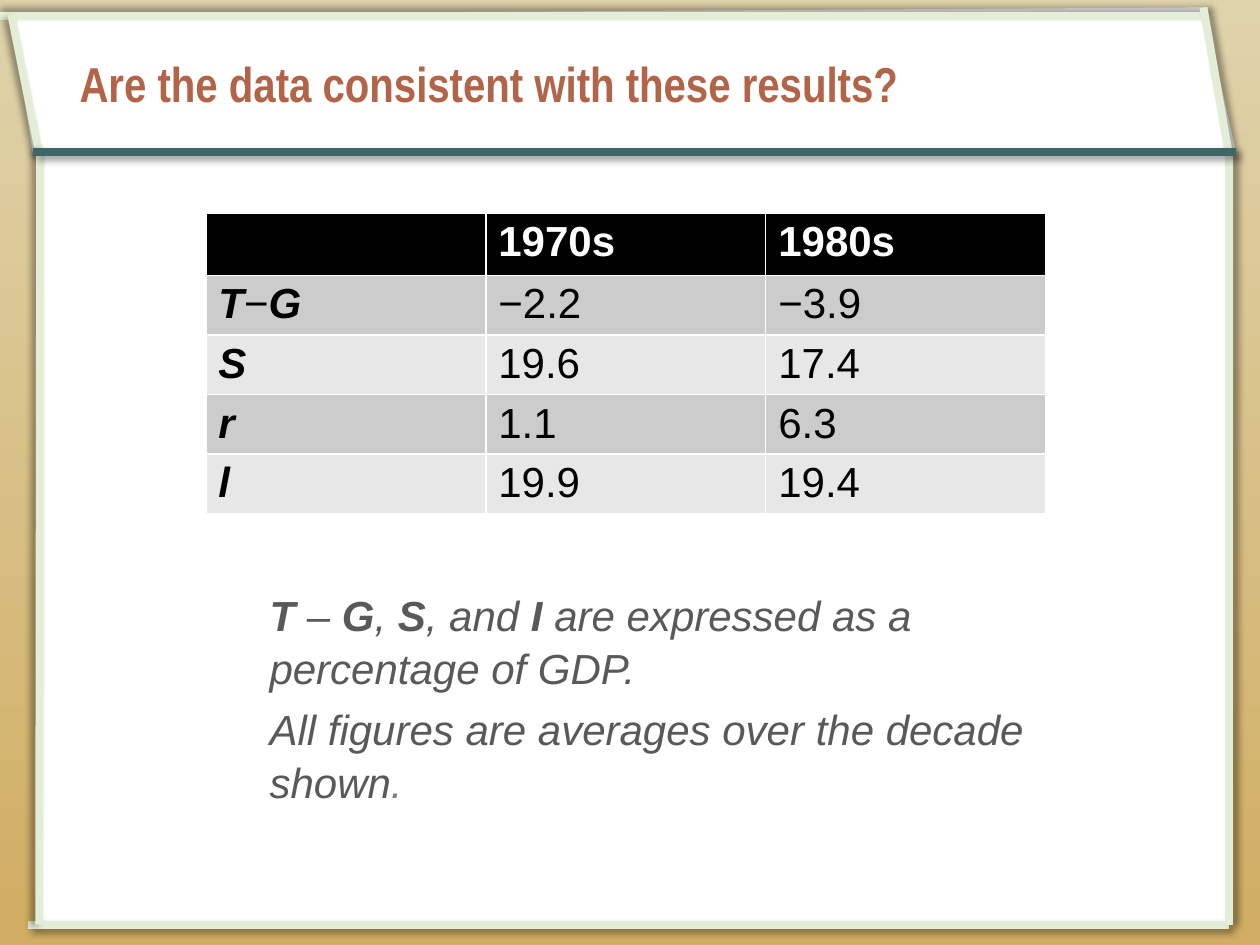
from lxml import etree
from pptx import Presentation
from pptx.dml.color import RGBColor
from pptx.enum.shapes import MSO_CONNECTOR, MSO_SHAPE
from pptx.enum.text import MSO_ANCHOR, MSO_AUTO_SIZE, PP_ALIGN
from pptx.oxml.ns import qn
from pptx.util import Cm, Pt

STRAIGHT = MSO_CONNECTOR.STRAIGHT
RECTANGLE = MSO_SHAPE.RECTANGLE
MIDDLE, TOP = MSO_ANCHOR.MIDDLE, MSO_ANCHOR.TOP
NO_FIT = MSO_AUTO_SIZE.NONE
LEFT = PP_ALIGN.LEFT

COLORS = {
    "sky": "DFD3AB", "sand": "D1AD63", "paper": "FFFFFF", "edge": "E4EDD7",
    "rule": "3D6667", "title": "B16447", "ink": "000000", "note": "595959",
    "stop": "808080", "odd": "CCCCCC", "even": "E7E7E7",
}
DECADES = ["", "1970s", "1980s"]
FIGURES = [
    ("T−G", "−2.2", "−3.9"),
    ("S", "19.6", "17.4"),
    ("r", "1.1", "6.3"),
    ("l", "19.9", "19.4"),
]
NOTES = [
    [("T ", True, "note"), ("– ", False, "note"), ("G", True, "note"),
     (", ", False, "note"), ("S", True, "note"), (", and ", False, "note"),
     ("I", True, "note"),
     (" are expressed as a percentage of GDP.", False, "note")],
    [("All figures are averages over the decade shown", False, "note"),
     (".", False, "stop")],
]


def rgb(name):
    return RGBColor.from_string(COLORS[name])


def add_span(para, text, size=24, color="ink", bold=False, italic=False, font="Arial"):
    span = para.add_run()
    span.text = text
    span.font.size = Pt(size)
    span.font.name = font
    span.font.bold = bold
    span.font.italic = italic
    span.font.color.rgb = rgb(color)


def paint(shape, color):
    shape.fill.solid()
    shape.fill.fore_color.rgb = rgb(color)
    shape.line.fill.background()
    shape.shadow.inherit = False


def add_edge(page, start, end, color, angle):
    edge = page.shapes.add_connector(STRAIGHT, *map(Cm, start + end))
    edge.line.color.rgb = rgb(color)
    edge.line.width = Pt(4.5)
    effects = etree.SubElement(edge._element.spPr, qn("a:effectLst"))
    shadow = etree.SubElement(
        effects, qn("a:outerShdw"), blurRad=str(Pt(4)), dist=str(Pt(3)),
        dir=str(angle * 60000), algn="tl", rotWithShape="0")
    tone = etree.SubElement(shadow, qn("a:srgbClr"), val=COLORS["ink"])
    etree.SubElement(tone, qn("a:alpha"), val="40000")


def draw_folder(page, box):
    left, top, width, height = box
    right, bottom, fold = left + width, top + height, top + 2.92
    flap = [(left, top + 0.15), (right - 0.66, top),
            (right, fold), (left + 0.43, fold)]
    builder = page.shapes.build_freeform(Cm(flap[0][0]), Cm(flap[0][1]), 1)
    builder.add_line_segments([(Cm(x), Cm(y)) for x, y in flap[1:]], close=True)
    paint(builder.convert_to_shape(), "paper")

    add_edge(page, (right - 0.66, top + 0.18), (0, top + 0.18), "edge", 270)
    inner_left, inner_right = left + 0.58, right - 0.15
    sheet = page.shapes.add_shape(
        RECTANGLE, Cm(inner_left), Cm(fold + 0.03),
        Cm(inner_right - inner_left), Cm(bottom - fold - 0.03))
    paint(sheet, "paper")

    edges = [
        ((inner_right, bottom), (left + 0.33, bottom), "edge", 45),
        ((inner_right, fold), (inner_right, bottom), "edge", 0),
        (flap[0], (inner_left - 0.02, fold + 0.03), "edge", 135),
        (flap[1], (inner_right, fold + 0.03), "edge", 0),
        ((inner_left, fold - 0.05), (inner_left - 0.02, bottom), "edge", 180),
        (flap[3], flap[2], "rule", 45),
    ]
    for edge in edges:
        add_edge(page, *edge)


def place_holder(page, holder, box, anchor):
    page.shapes._spTree.append(holder._element)
    holder.left, holder.top, holder.width, holder.height = map(Cm, box)
    frame = holder.text_frame
    frame.word_wrap = True
    frame.auto_size = NO_FIT
    frame.vertical_anchor = anchor
    return frame


def write_title(page, box):
    title = page.shapes.title
    frame = place_holder(page, title, box, MIDDLE)
    frame.margin_right = Cm(1.27)
    paint(title, "paper")
    para = frame.paragraphs[0]
    para.alignment = LEFT
    add_span(para, "Are the data consistent with these results?", size=28,
             color="title", bold=True, font="Arial Narrow")


def add_figures(page, box):
    rows = [DECADES] + FIGURES
    table = page.shapes.add_table(len(rows), len(DECADES), *map(Cm, box)).table
    for row_index, row in enumerate(rows):
        header = row_index == 0
        fill = "ink" if header else ("odd" if row_index % 2 else "even")
        for column_index, text in enumerate(row):
            cell = table.cell(row_index, column_index)
            cell.fill.solid()
            cell.fill.fore_color.rgb = rgb(fill)
            cell.margin_top = cell.margin_bottom = Cm(0.11)
            para = cell.text_frame.paragraphs[0]
            para.font.size = Pt(24)
            if header and text:
                add_span(para, text, color="paper", bold=True)
            elif not header and column_index == 0:
                for symbol in text:
                    strong = symbol != "−"
                    add_span(para, symbol, bold=strong, italic=strong)
            elif text:
                add_span(para, text)


def write_notes(page, box):
    frame = place_holder(page, page.placeholders[1], box, TOP)
    for index, note in enumerate(NOTES):
        para = frame.add_paragraph() if index else frame.paragraphs[0]
        para.space_before = Pt(4.8)
        para.line_spacing = 1.05
        properties = para._p.get_or_add_pPr()
        properties.set("marL", "0")
        properties.set("indent", "0")
        etree.SubElement(properties, qn("a:buNone"))
        for text, bold, color in note:
            add_span(para, text, color=color, bold=bold, italic=True)


def main():
    deck = Presentation()
    deck.slide_width, deck.slide_height = Cm(25.4), Cm(19.05)
    page = deck.slides.add_slide(deck.slide_layouts[1])
    backdrop = page.background.fill
    backdrop.gradient()
    backdrop.gradient_angle = 270
    for stop, color in zip(backdrop.gradient_stops, ("sky", "sand")):
        stop.color.rgb = rgb(color)
    draw_folder(page, (0.23, 0.15, 24.69, 18.49))
    write_title(page, (1.35, 0.48, 22.5, 2.39))
    add_figures(page, (4.15, 4.3, 16.93, 6))
    write_notes(page, (5.18, 11.71, 15.8, 4.45))
    deck.save("out.pptx")


if __name__ == "__main__":
    main()
